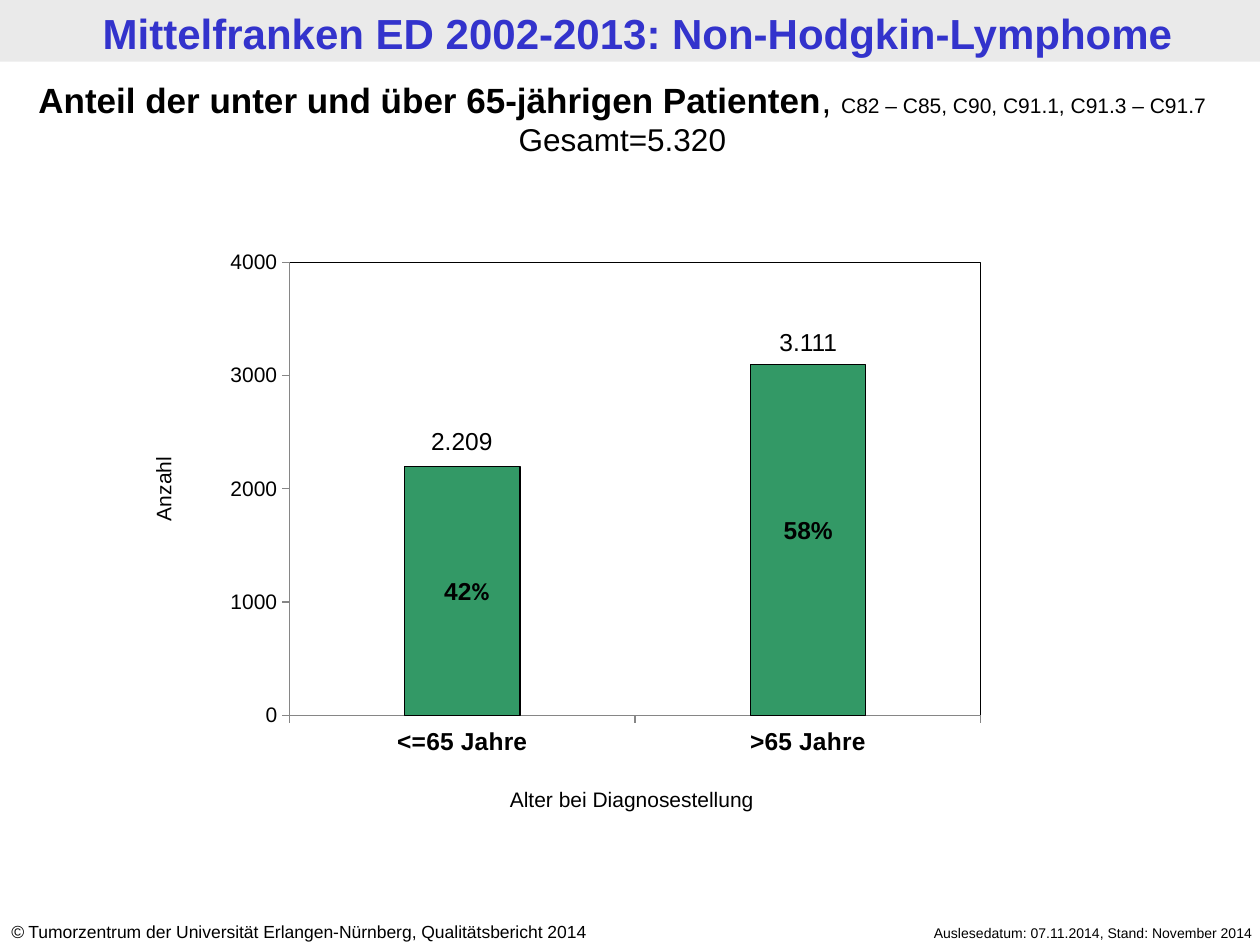
"""Build the slide on the age split of non-Hodgkin lymphoma patients."""
from dataclasses import dataclass

from lxml.etree import SubElement
from pptx import Presentation
from pptx.chart.data import CategoryChartData
from pptx.dml.color import RGBColor
from pptx.enum.chart import XL_CHART_TYPE, XL_TICK_MARK
from pptx.enum.shapes import MSO_SHAPE
from pptx.enum.text import MSO_ANCHOR, PP_ALIGN
from pptx.oxml import parse_xml
from pptx.oxml.ns import nsdecls, qn
from pptx.util import Inches, Pt


@dataclass(frozen=True)
class Theme:
    font: str = "Arial"
    percent_font: str = "Calibri"
    ink: RGBColor = RGBColor(0, 0, 0)
    title: RGBColor = RGBColor(0x33, 0x33, 0xCC)
    band: RGBColor = RGBColor(0xEA, 0xEA, 0xEA)
    bar: RGBColor = RGBColor(0x33, 0x99, 0x66)
    axis: RGBColor = RGBColor(0x86, 0x86, 0x86)
    title_size: Pt = Pt(24)
    heading_size: Pt = Pt(20)
    total_size: Pt = Pt(18)
    label_size: Pt = Pt(14)
    small_size: Pt = Pt(12)
    copyright_size: Pt = Pt(10)
    date_size: Pt = Pt(8)


theme = Theme()


def style(font, size, bold=False, color=theme.ink, name=theme.font):
    font.name, font.size, font.bold = name, size, bold
    font.color.rgb = color


def add_text(box, paragraphs, align=PP_ALIGN.CENTER):
    left, top, width, height = (Inches(length) for length in box)
    text_box = slide.shapes.add_textbox(left, top, width, height)
    frame = text_box.text_frame
    frame.word_wrap = True
    frame.text = "\n".join("".join(part[0] for part in parts) for parts in paragraphs)
    for paragraph, parts in zip(frame.paragraphs, paragraphs):
        paragraph.alignment = align
        paragraph.text = ""
        for wording, size, bold in parts:
            run = paragraph.add_run()
            run.text = wording
            style(run.font, size, bold)
    return text_box


presentation = Presentation()
presentation.slide_width, presentation.slide_height = Inches(10), Inches(7.5)
slide = presentation.slides.add_slide(presentation.slide_layouts[5])

band = slide.shapes.add_shape(MSO_SHAPE.RECTANGLE, 0, 0, Inches(10), Inches(0.49))
band.shadow.inherit = False
band.fill.solid()
band.fill.fore_color.rgb = theme.band
band.line.fill.background()

title = slide.shapes.title
band.element.addnext(title.element)
title.left, title.top = Inches(0.06), Inches(0.01)
title.width, title.height = Inches(10), Inches(0.49)
title.text_frame.text = "Mittelfranken ED 2002-2013: Non-Hodgkin-Lymphome"
title.text_frame.vertical_anchor = MSO_ANCHOR.TOP
title.text_frame.paragraphs[0].alignment = PP_ALIGN.CENTER
style(title.text_frame.paragraphs[0].runs[0].font, theme.title_size, True, theme.title)

add_text((6.65, 7.29, 3.39, 0.24),
         [[("Auslesedatum: 07.11.2014, Stand: November 2014", theme.date_size, False)]],
         PP_ALIGN.RIGHT)
copyright_note = add_text(
    (-0.01, 7.26, 5.24, 0.27),
    [[("©", theme.copyright_size, False),
      (" Tumorzentrum der Universität Erlangen-Nürnberg, Qualitätsbericht 2014",
       theme.copyright_size, False)]],
    PP_ALIGN.LEFT)
copyright_note.text_frame.paragraphs[0].runs[0].font.italic = True

patients = CategoryChartData()
patients.categories = ["<=65 Jahre", ">65 Jahre"]
patients.add_series("Series 1", (2200, 3100))
chart = slide.shapes.add_chart(
    XL_CHART_TYPE.COLUMN_STACKED, Inches(1.51), Inches(1.42),
    Inches(6.98), Inches(4.66), patients).chart
chart.has_legend = False
chart.has_title = False
style(chart.font, theme.total_size, name=theme.percent_font)

columns = chart.plots[0]
columns.gap_width, columns.overlap, columns.vary_by_categories = 200, 100, False
age_groups = columns.series[0]
age_groups.format.fill.solid()
age_groups.format.fill.fore_color.rgb = theme.bar
age_groups.format.line.color.rgb = theme.ink
age_groups.format.line.width = Pt(0.75)

for axis, size, bold in ((chart.category_axis, theme.label_size, True),
                         (chart.value_axis, theme.small_size, False)):
    axis.has_major_gridlines = False
    axis.major_tick_mark = XL_TICK_MARK.OUTSIDE
    axis.minor_tick_mark = XL_TICK_MARK.NONE
    axis.format.line.color.rgb = theme.axis
    axis.format.line.width = Pt(0.75)
    style(axis.tick_labels.font, size, bold)
count_axis = chart.value_axis
count_axis.minimum_scale, count_axis.maximum_scale, count_axis.major_unit = 0, 4000, 1000
count_axis.tick_labels.number_format = "0"
count_axis.tick_labels.number_format_is_linked = False

plot_area = chart.element.find(".//" + qn("c:plotArea"))
for old_layout in plot_area.findall(qn("c:layout")):
    plot_area.remove(old_layout)
layout = parse_xml(f"<c:layout {nsdecls('c')}><c:manualLayout/></c:layout>")
for tag, value in (("layoutTarget", "inner"), ("xMode", "edge"), ("yMode", "edge"),
                   ("x", "0.113"), ("y", "0.142"), ("w", "0.786"), ("h", "0.772")):
    SubElement(layout[0], qn(f"c:{tag}")).set("val", value)
plot_area.insert(0, layout)
plot_area.append(parse_xml(
    f'<c:spPr {nsdecls("c", "a")}><a:noFill/><a:ln w="{Pt(0.75)}"><a:solidFill>'
    f'<a:srgbClr val="{theme.ink}"/></a:solidFill></a:ln></c:spPr>'))

add_text((0, 0.57, 9.88, 0.74), [
    [("Anteil der unter und über 65-jährigen Patienten", theme.heading_size, True),
     (", ", theme.heading_size, False),
     ("C82 – C85, C90, C91.1, C91.3 – C91.7", theme.small_size, False)],
    [("Gesamt=5.320", theme.total_size, False)]])

younger_share = add_text((3.27, 4.52, 0.87, 0.34),
                         [[("42", theme.label_size, True), ("%", theme.label_size, True)]])
younger_share.text_frame.paragraphs[0].runs[1].font.name = theme.percent_font

for box, wording, size, bold in (
        ((5.94, 4.04, 0.95, 0.34), "58%", theme.label_size, True),
        ((5.94, 2.55, 0.95, 0.34), "3.111", theme.label_size, False),
        ((3.19, 3.33, 0.95, 0.34), "2.209", theme.label_size, False),
        ((3.35, 6.19, 3.33, 0.3), "Alter bei Diagnosestellung", theme.small_size, False)):
    add_text(box, [[(wording, size, bold)]])

count_caption = add_text((-0.01, 3.73, 2.61, 0.3), [[("Anzahl", theme.small_size, False)]])
count_caption.rotation = 270

presentation.save("out.pptx")
